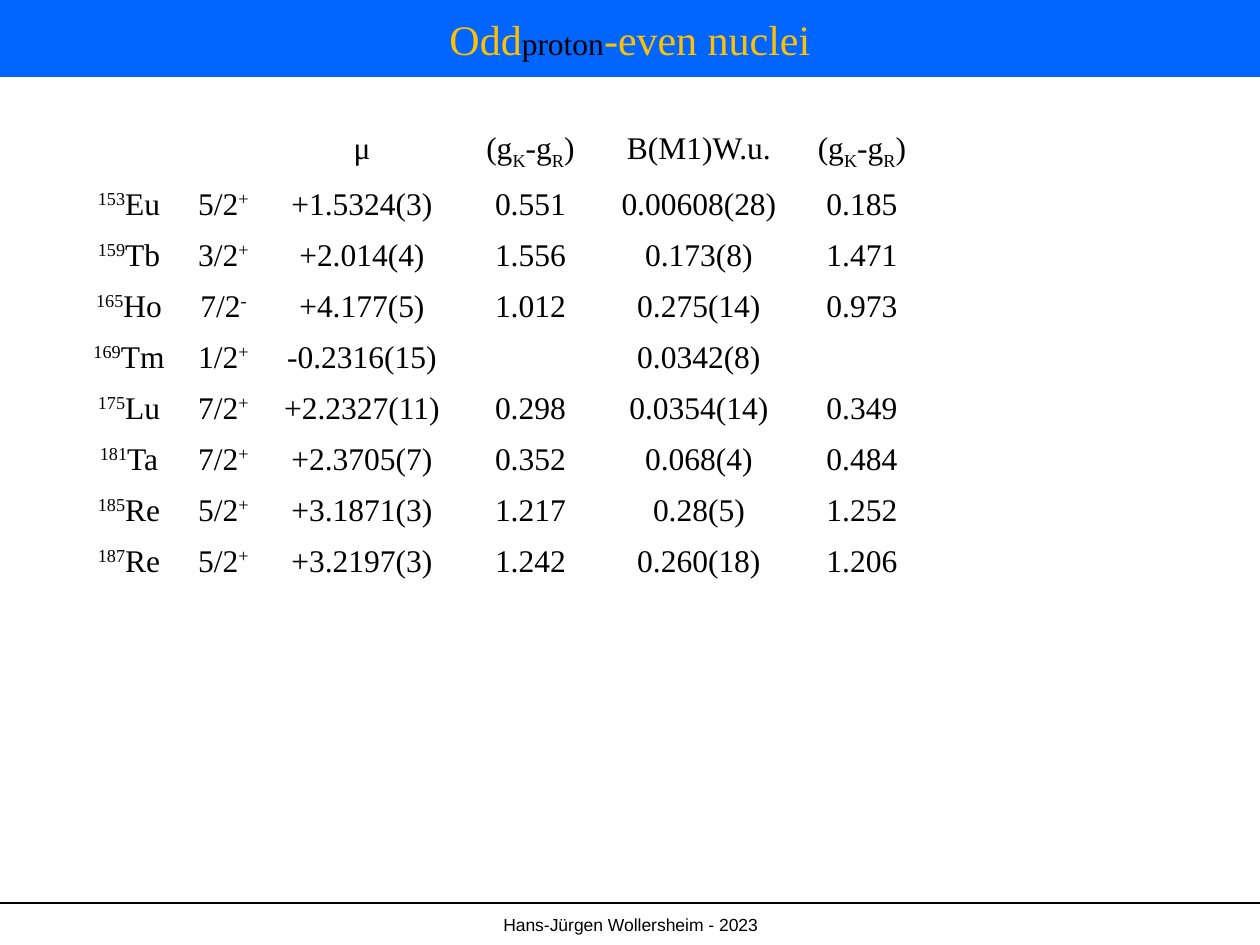
"""Build a slide tabulating magnetic properties of odd-proton nuclei."""
import pptx
import pptx.dml.color
import pptx.enum.shapes
import pptx.enum.text
import pptx.util
from lxml import etree

PX = 914400 // 126
SERIF = "Times New Roman"
BLACK, BLUE, GOLD = "000000", "0066FF", "FFC000"
SUPERSCRIPT, SUBSCRIPT = 30, -25

TITLE = [("Odd", 24, GOLD), ("proton", 18, BLACK), ("-even nuclei", 24, GOLD)]
FOOTER = "Hans-Jürgen Wollersheim - 2023"
G_FACTORS = [("(g", 0), ("K", SUBSCRIPT), ("-g", 0), ("R", SUBSCRIPT), (")", 0)]
HEADER = [[], [], [("μ", 0)], G_FACTORS, [("B(M1)W.u.", 0)], G_FACTORS]
NUCLEI = [
    ("153", "Eu", "5/2", "+", "+1.5324(3)", "0.551", "0.00608(28)", "0.185"),
    ("159", "Tb", "3/2", "+", "+2.014(4)", "1.556", "0.173(8)", "1.471"),
    ("165", "Ho", "7/2", "-", "+4.177(5)", "1.012", "0.275(14)", "0.973"),
    ("169", "Tm", "1/2", "+", "-0.2316(15)", "", "0.0342(8)", ""),
    ("175", "Lu", "7/2", "+", "+2.2327(11)", "0.298", "0.0354(14)", "0.349"),
    ("181", "Ta", "7/2", "+", "+2.3705(7)", "0.352", "0.068(4)", "0.484"),
    ("185", "Re", "5/2", "+", "+3.1871(3)", "1.217", "0.28(5)", "1.252"),
    ("187", "Re", "5/2", "+", "+3.2197(3)", "1.242", "0.260(18)", "1.206"),
]
COLUMN_WIDTHS = [110, 79, 198, 139, 198, 128, 102, 136]
ROW_HEIGHT = 51


def color(value):
    return pptx.dml.color.RGBColor.from_string(value)


def box(*lengths):
    return [length * PX for length in lengths]


def add_run(paragraph, text, size, value, font=SERIF, baseline=0):
    paragraph.alignment = pptx.enum.text.PP_ALIGN.CENTER
    run = paragraph.add_run()
    run.text = text
    run.font.size = pptx.util.Pt(size)
    run.font.name = font
    run.font.color.rgb = color(value)
    if baseline:
        run.font._element.set("baseline", str(baseline * 1000))


def add_title(slide):
    title = slide.shapes.title
    title.left, title.top, title.width, title.height = box(0, 0, 1260, 77)
    title.fill.solid()
    title.fill.fore_color.rgb = color(BLUE)
    title.text_frame.vertical_anchor = pptx.enum.text.MSO_ANCHOR.MIDDLE
    for text, size, value in TITLE:
        add_run(title.text_frame.paragraphs[0], text, size, value)


def add_footer(slide):
    line = slide.shapes.add_connector(
        pptx.enum.shapes.MSO_CONNECTOR.STRAIGHT, *box(0, 903, 1260, 903))
    line.line.color.rgb = color(BLACK)
    line.line.width = pptx.util.Pt(1.5)
    etree.SubElement(line._element.spPr, pptx.oxml.ns.qn("a:effectLst"))
    footer = slide.shapes.add_textbox(*box(1, 908, 1259, 37))
    footer.text_frame.word_wrap = True
    add_run(footer.text_frame.paragraphs[0], FOOTER, 10, BLACK, "Arial")


def nucleus_cells(mass, symbol, spin, parity, *values):
    return [
        [(mass, SUPERSCRIPT), (symbol, 0)],
        [(spin, 0), (parity, SUPERSCRIPT)],
        *[[(value, 0)] if value else [] for value in values],
    ]


def add_nuclei_table(slide):
    rows = [HEADER] + [nucleus_cells(*nucleus) for nucleus in NUCLEI]
    table = slide.shapes.add_table(
        len(rows), len(COLUMN_WIDTHS),
        *box(74, 125, sum(COLUMN_WIDTHS), ROW_HEIGHT * len(rows))).table
    table.first_row = table.horz_banding = False
    for column, width in zip(table.columns, COLUMN_WIDTHS):
        column.width = width * PX
    for cell in table.iter_cells():
        cell.fill.background()
    for row_index, row in enumerate(rows):
        table.rows[row_index].height = ROW_HEIGHT * PX
        for column_index, runs in enumerate(row):
            paragraph = table.cell(row_index, column_index).text_frame.paragraphs[0]
            for text, baseline in runs:
                add_run(paragraph, text, 18, BLACK, baseline=baseline)


def main():
    presentation = pptx.Presentation()
    presentation.slide_width, presentation.slide_height = box(1260, 945)
    slide = presentation.slides.add_slide(presentation.slide_layouts[5])
    add_footer(slide)
    add_title(slide)
    add_nuclei_table(slide)
    presentation.save("out.pptx")


if __name__ == "__main__":
    main()
